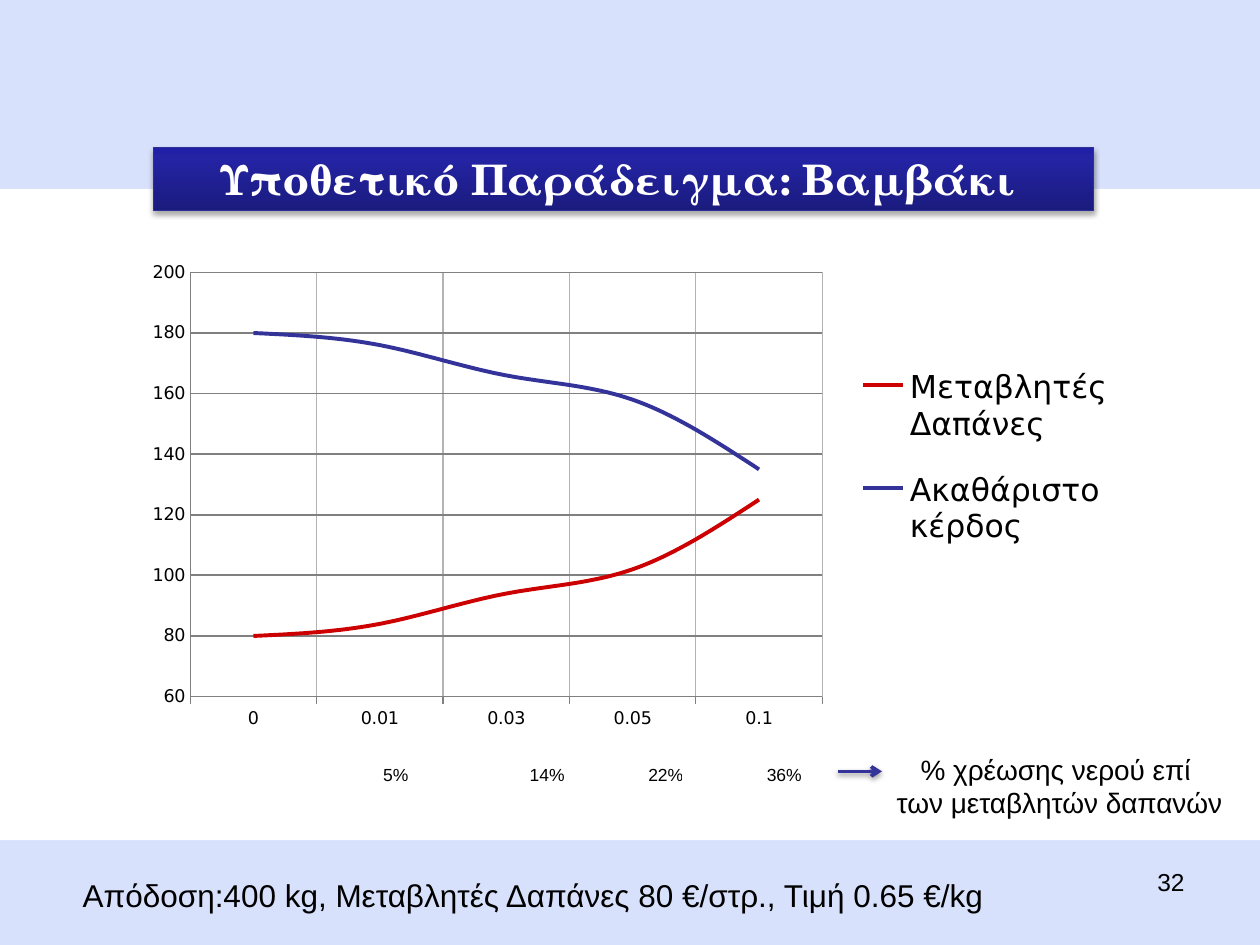
from copy import deepcopy

from pptx import Presentation
from pptx.chart.data import CategoryChartData
from pptx.dml.color import RGBColor
from pptx.enum.chart import XL_CHART_TYPE, XL_LEGEND_POSITION, XL_TICK_MARK
from pptx.enum.shapes import MSO_CONNECTOR, MSO_SHAPE
from pptx.enum.text import MSO_ANCHOR, MSO_AUTO_SIZE, PP_ALIGN
from pptx.oxml import parse_xml
from pptx.oxml.ns import nsdecls, qn
from pptx.util import Cm, Pt

PALE = RGBColor(0xD8, 0xE1, 0xFC)
WHITE = RGBColor(0xFF, 0xFF, 0xFF)
BLACK = RGBColor(0, 0, 0)
NAVY = RGBColor(0x33, 0x33, 0x99)
EDGE = RGBColor(0x2F, 0x2F, 0x98)
RED = RGBColor(0xCC, 0, 0)
GRAY = RGBColor(0x80, 0x80, 0x80)
SILVER = RGBColor(0xB3, 0xB3, 0xB3)
BLEND = [
    (0, RGBColor(0x1B, 0x1B, 0x7E)),
    (0.8, RGBColor(0x23, 0x23, 0xA3)),
    (1, RGBColor(0x20, 0x20, 0xA6)),
]


def drop_shadow(shape, dist, alpha):
    """Add a soft shadow below; dist in points, alpha in percent."""
    shape.element.spPr.append(parse_xml(
        f'<a:effectLst {nsdecls("a")}><a:outerShdw blurRad="{Pt(3.1)}" '
        f'dist="{Pt(dist)}" dir="5400000" rotWithShape="0">'
        f'<a:srgbClr val="000000"><a:alpha val="{alpha * 1000}"/>'
        '</a:srgbClr></a:outerShdw></a:effectLst>'))


def set_layout(part, x, y, w, h, inner=False):
    """Fix a chart part in fractions of the chart."""
    for old in part.findall(qn("c:layout")):
        part.remove(old)
    target = '<c:layoutTarget val="inner"/>' if inner else ""
    layout = parse_xml(
        f'<c:layout {nsdecls("c")}><c:manualLayout>{target}'
        '<c:xMode val="edge"/><c:yMode val="edge"/>'
        f'<c:x val="{x}"/><c:y val="{y}"/><c:w val="{w}"/><c:h val="{h}"/>'
        '</c:manualLayout></c:layout>')
    part.insert(0 if inner else 1, layout)


class Deck:
    def __init__(self, font="Arial"):
        self.font = font
        self.prs = Presentation()
        self.prs.slide_width, self.prs.slide_height = Cm(25.4), Cm(19.05)
        self.slide = self.prs.slides.add_slide(self.prs.slide_layouts[5])
        fill = self.slide.background.fill
        fill.solid()
        fill.fore_color.rgb = PALE

    def style(self, font, size, color=BLACK, name=None, bold=False):
        font.name = name or self.font
        font.size = Pt(size)
        font.bold = bold
        font.color.rgb = color

    def panel(self, x, y, w, h):
        box = self.slide.shapes.add_shape(
            MSO_SHAPE.RECTANGLE, Cm(x), Cm(y), Cm(w), Cm(h))
        box.shadow.inherit = False
        box.fill.solid()
        box.fill.fore_color.rgb = WHITE
        box.line.fill.background()

    def title(self, text, x, y, w, h):
        title = self.slide.shapes.title
        tree = title.element.getparent()
        tree.append(title.element)  # bring in front of the panel
        title.left, title.top = Cm(x), Cm(y)
        title.width, title.height = Cm(w), Cm(h)
        title.fill.gradient()
        title.fill.gradient_angle = 90
        stops = title.element.spPr.find(".//" + qn("a:gsLst"))
        stops.append(deepcopy(stops[-1]))
        for stop, (place, color) in zip(title.fill.gradient_stops, BLEND):
            stop.position = place
            stop.color.rgb = color
        title.line.color.rgb = EDGE
        title.line.width = Pt(0.75)
        drop_shadow(title, 1.8, 35)
        frame = title.text_frame
        frame.text = text
        frame.auto_size = MSO_AUTO_SIZE.NONE
        frame.vertical_anchor = MSO_ANCHOR.MIDDLE
        para = frame.paragraphs[0]
        para.alignment = PP_ALIGN.CENTER
        self.style(para.font, 24, WHITE, "TeX Gyre Schola", True)

    def text(self, text, x, y, w, h, size, align=PP_ALIGN.CENTER, wrap=True):
        box = self.slide.shapes.add_textbox(Cm(x), Cm(y), Cm(w), Cm(h))
        frame = box.text_frame
        frame.word_wrap = wrap
        frame.text = text
        for para in frame.paragraphs:
            para.alignment = align
            self.style(para.font, size)

    def chart(self, cats, rows, x, y, w, h):
        """Draw smooth lines; rows holds (name, values, color)."""
        data = CategoryChartData()
        data.categories = cats
        for name, vals, _ in rows:
            data.add_series(name, vals)
        chart = self.slide.shapes.add_chart(
            XL_CHART_TYPE.LINE, Cm(x), Cm(y), Cm(w), Cm(h), data).chart
        chart.has_title = False
        self.style(chart.font, 10, name="DejaVu Sans")
        chart.plots[0].vary_by_categories = False
        for line, (_, _, color) in zip(chart.plots[0].series, rows):
            line.smooth = True
            line.format.line.color.rgb = color
            line.format.line.width = Pt(2.25)

        cat, val = chart.category_axis, chart.value_axis
        val.minimum_scale, val.maximum_scale, val.major_unit = 60, 200, 20
        for axis, tick, color, width in (
                (cat, XL_TICK_MARK.OUTSIDE, SILVER, 0.75),
                (val, XL_TICK_MARK.INSIDE, GRAY, 1)):
            axis.major_tick_mark = tick
            axis.format.line.color.rgb = GRAY
            axis.has_major_gridlines = True
            grid = axis.major_gridlines.format.line
            grid.color.rgb = color
            grid.width = Pt(width)

        chart.has_legend = True
        legend = chart.legend
        legend.position = XL_LEGEND_POSITION.RIGHT
        legend.include_in_layout = False
        self.style(legend.font, 18, name="DejaVu Sans")
        plot = chart.element.find(".//" + qn("c:plotArea"))
        set_layout(plot, 0.06, 0.04, 0.64, 0.87, inner=True)
        set_layout(chart.element.find(".//" + qn("c:legend")),
                   0.73, 0.18, 0.27, 0.48)

    def table(self, texts, widths, x, y, h):
        table = self.slide.shapes.add_table(
            1, len(texts), Cm(x), Cm(y), Cm(sum(widths)), Cm(h)).table
        table.first_row = table.horz_banding = False
        table.rows[0].height = Cm(h)
        for col, width, cell, text in zip(
                table.columns, widths, table.rows[0].cells, texts):
            col.width = Cm(width)
            cell.fill.background()
            cell.margin_left = cell.margin_right = 0
            cell.margin_top = cell.margin_bottom = 0
            cell.vertical_anchor = MSO_ANCHOR.BOTTOM
            cell.text = text
            para = cell.text_frame.paragraphs[0]
            para.alignment = PP_ALIGN.RIGHT
            self.style(para.font, 10)

    def arrow(self, x, y, w):
        arrow = self.slide.shapes.add_connector(
            MSO_CONNECTOR.STRAIGHT, Cm(x), Cm(y), Cm(x + w), Cm(y))
        arrow.line.color.rgb = NAVY
        arrow.line.width = Pt(2)
        arrow.element.spPr.find(qn("a:ln")).append(
            parse_xml(f'<a:tailEnd {nsdecls("a")} type="arrow"/>'))
        drop_shadow(arrow, 1.6, 38)


def main():
    deck = Deck()
    deck.panel(0, 3.81, 25.4, 13.13)
    deck.title("Υποθετικό Παράδειγμα: Βαμβάκι ", 3.1, 2.97, 18.95, 1.28)
    deck.text("32", 18.2, 17.35, 5.93, 1.32, 14, PP_ALIGN.RIGHT)
    deck.chart(
        ["0", "0.01", "0.03", "0.05", "0.1"],
        [("Μεταβλητές Δαπάνες", [80, 84, 94, 102, 125], RED),
         ("Ακαθάριστο κέρδος", [180, 176, 166, 158, 135], NAVY)],
        2.64, 5.1, 19.91, 9.83)
    deck.text("Απόδοση:400 kg, Μεταβλητές Δαπάνες 80 €/στρ., Τιμή 0.65 €/kg",
              1.27, 17.53, 18.95, 1.02, 18)
    deck.table(["5%", "14%", "22%", "36%"], [3.94, 3.15, 2.39, 2.39],
               4.29, 15.37, 0.46)
    deck.arrow(16.89, 15.55, 0.89)
    deck.text("% χρέωσης νερού επί \nτων μεταβλητών δαπανών",
              17.78, 15.04, 7.16, 1.63, 16, wrap=False)
    deck.prs.save("out.pptx")


if __name__ == "__main__":
    main()
